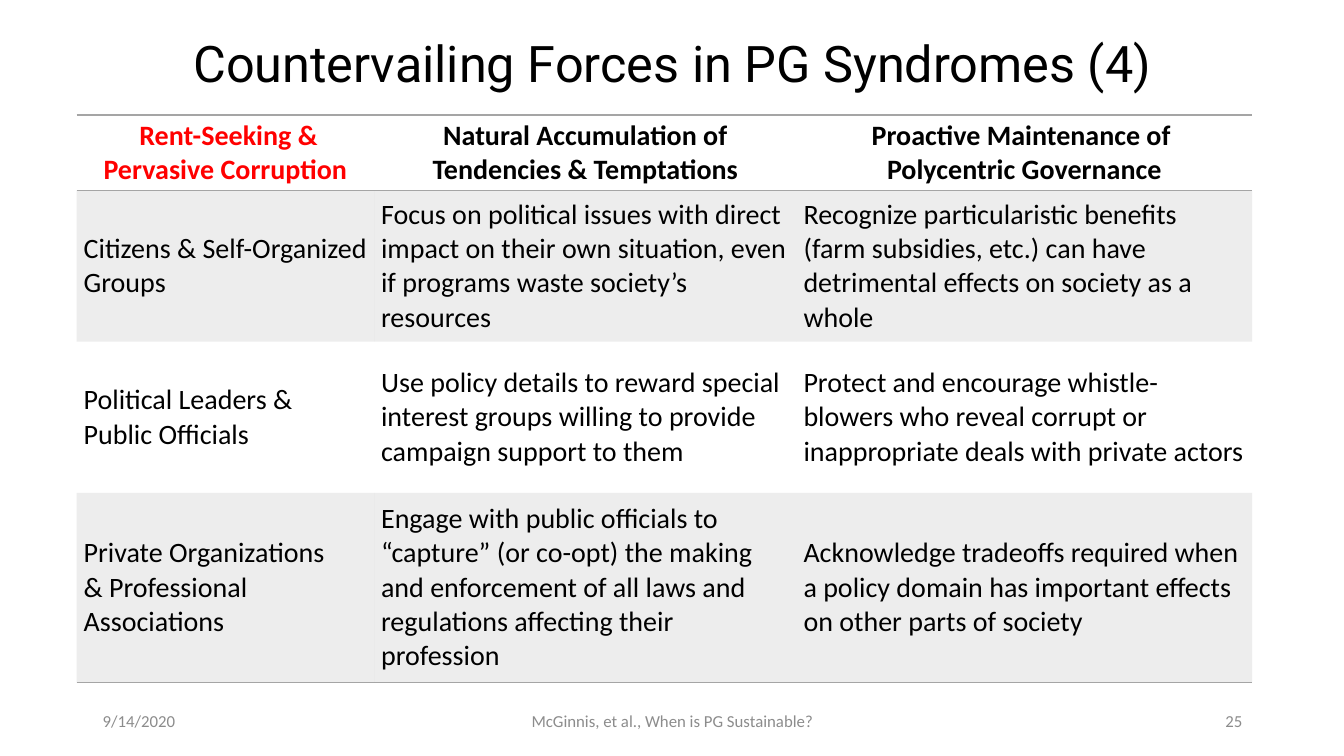
from lxml.etree import SubElement
from pptx import Presentation
from pptx.dml.color import RGBColor
from pptx.enum.text import MSO_ANCHOR as Anchor, PP_ALIGN as Align
from pptx.oxml.ns import qn
from pptx.util import Inches, Pt

COLORS = {"text": "000000", "accent": "FF0000", "rule": "A5A5A5", "footer": "8C8C8C"}
NO_STYLE = "{2D5ABB26-0587-4C30-8999-92F81FD0307C}"
COLUMNS = [2.95, 4.19, 4.52]
ROWS = [0.75, 1.5, 1.5, 1.88]
MARGIN, CONTENT = 0.92, 11.5
FOOTER_TOP, FOOTER_HEIGHT = 6.95, 0.4

CELLS = [
    [" Rent-Seeking & Pervasive Corruption",
     "Natural Accumulation of Tendencies & Temptations",
     "Proactive Maintenance of \nPolycentric Governance"],
    ["Citizens & Self-Organized Groups",
     "Focus on political issues with direct impact on their own situation, even if programs waste society’s resources",
     "Recognize particularistic benefits (farm subsidies, etc.) can have detrimental effects on society as a whole"],
    ["Political Leaders & Public Officials",
     "Use policy details to reward special interest groups willing to provide campaign support to them",
     "Protect and encourage whistle-blowers who reveal corrupt or inappropriate deals with private actors"],
    ["Private Organizations\n& Professional Associations",
     "Engage with public officials to “capture” (or co-opt) the making and enforcement of all laws and regulations affecting their profession",
     "Acknowledge tradeoffs required when a policy domain has important effects on other parts of society"],
]


def write(frame, text, size=20, font="Calibri", color="text", bold=False,
          align=Align.LEFT, spacing=None):
    frame.word_wrap = True
    for index, line in enumerate(text.split("\n")):
        para = frame.add_paragraph() if index else frame.paragraphs[0]
        para.alignment = align
        para.line_spacing = spacing
        span = para.add_run()
        span.text = line
        span.font.size = Pt(size)
        span.font.name = font
        span.font.bold = bold
        span.font.color.rgb = RGBColor.from_string(COLORS[color])


deck = Presentation()
deck.slide_width, deck.slide_height = Inches(13.33), Inches(7.5)
page = deck.slides.add_slide(deck.slide_layouts[6])

title = page.shapes.add_textbox(Inches(MARGIN), Inches(0.4), Inches(CONTENT), Inches(0.52))
title.text_frame.vertical_anchor = Anchor.MIDDLE
write(title.text_frame, "Countervailing Forces in PG Syndromes (4)",
      size=36, font="Roboto", align=Align.CENTER, spacing=0.9)

table = page.shapes.add_table(len(ROWS), len(COLUMNS), Inches(0.76), Inches(1.14),
                              Inches(sum(COLUMNS)), Inches(sum(ROWS))).table
table._tbl.tblPr.find(qn("a:tableStyleId")).text = NO_STYLE
for column, width in zip(table.columns, COLUMNS):
    column.width = Inches(width)

for row_index, (texts, height) in enumerate(zip(CELLS, ROWS)):
    table.rows[row_index].height = Inches(height)
    header = row_index == 0
    edges = {0: ["a:lnT", "a:lnB"], len(ROWS) - 1: ["a:lnB"]}.get(row_index, [])
    for column_index, text in enumerate(texts):
        cell = table.cell(row_index, column_index)
        cell.vertical_anchor = Anchor.MIDDLE
        cell.margin_left = cell.margin_right = Inches(0.07)
        cell.margin_top = cell.margin_bottom = 0
        write(cell.text_frame, text, bold=header,
              color="accent" if header and column_index == 0 else "text",
              align=Align.CENTER if header else Align.LEFT)
        properties = cell._tc.get_or_add_tcPr()
        for edge in edges:
            line = SubElement(properties, qn(edge), w=str(Pt(1)))
            paint = SubElement(line, qn("a:solidFill"))
            SubElement(paint, qn("a:srgbClr"), val=COLORS["rule"])
        if row_index % 2:
            cell.fill.solid()
            cell.fill.fore_color.rgb = RGBColor.from_string(COLORS["rule"])
            shade = properties.find(qn("a:solidFill")).find(qn("a:srgbClr"))
            SubElement(shade, qn("a:alpha"), val="20000")
        else:
            cell.fill.background()

FOOTERS = [
    ("9/14/2020", MARGIN, 3, Align.LEFT),
    ("McGinnis, et al., When is PG Sustainable?", MARGIN + (CONTENT - 4.5) / 2, 4.5, Align.CENTER),
    ("25", MARGIN + CONTENT - 3, 3, Align.RIGHT),
]
for text, left, width, align in FOOTERS:
    box = page.shapes.add_textbox(Inches(left), Inches(FOOTER_TOP), Inches(width), Inches(FOOTER_HEIGHT))
    box.text_frame.vertical_anchor = Anchor.MIDDLE
    write(box.text_frame, text, size=12, color="footer", align=align)

deck.save("out.pptx")
